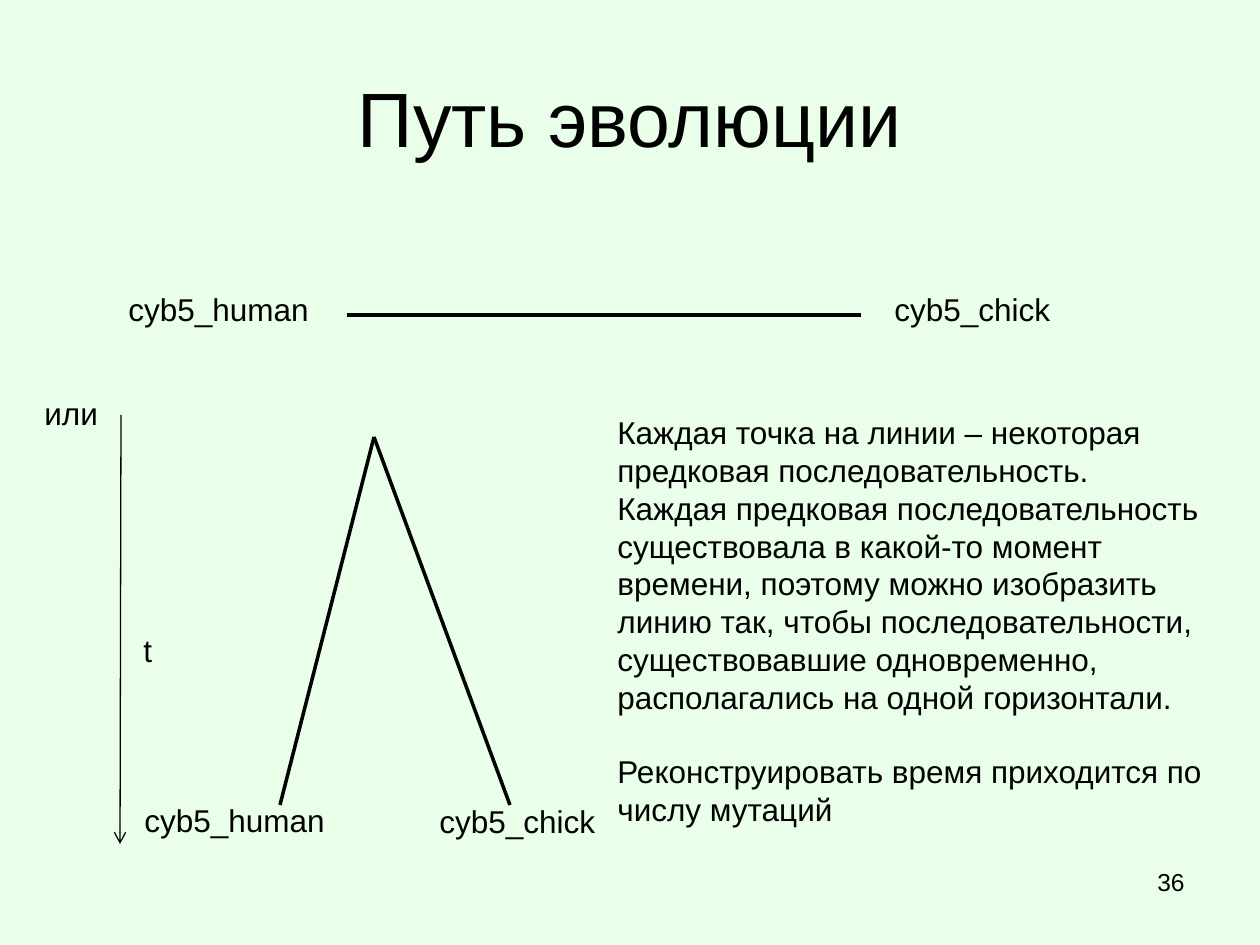
from lxml.etree import SubElement
from pptx import Presentation
from pptx.dml.color import RGBColor
from pptx.enum.shapes import MSO_CONNECTOR
from pptx.enum.text import MSO_ANCHOR, PP_ALIGN
from pptx.oxml.ns import qn
from pptx.util import Emu, Pt

BLACK = RGBColor(0x00, 0x00, 0x00)
MINT = RGBColor(0xE9, 0xFF, 0xE9)
FONT = "Arial"
LABEL_WIDTH, LABEL_HEIGHT = 210, 50
HUMAN, CHICK = "cyb5_human", "cyb5_chick"
EXPLANATION = [
    "Каждая точка на линии – некоторая предковая последовательность.",
    "Каждая предковая последовательность существовала в какой-то момент "
    "времени, поэтому можно изобразить линию так, чтобы последовательности, "
    "существовавшие одновременно, располагались на одной горизонтали.",
    "Реконструировать время приходится по числу мутаций",
]


def px(length):
    """Convert slide pixels to EMU."""
    return Emu(round(length * 914400 / 126))


def add_text(page, left, top, width, height, lines, size=18,
             align=PP_ALIGN.LEFT, anchor=MSO_ANCHOR.TOP):
    """Add a wrapped text box with one paragraph per line and return its frame."""
    box = page.shapes.add_textbox(px(left), px(top), px(width), px(height))
    text_frame = box.text_frame
    text_frame.word_wrap = True
    text_frame.vertical_anchor = anchor
    text_frame.text = "\n".join(lines)
    for para in text_frame.paragraphs:
        para.alignment = align
        for span in para.runs:
            span.font.name = FONT
            span.font.size = Pt(size)
            span.font.color.rgb = BLACK
    return text_frame


def add_label(page, left, top, text, width=LABEL_WIDTH):
    """Add a one-line label."""
    add_text(page, left, top, width, LABEL_HEIGHT, [text])


def add_line(page, start, end, weight=2, arrow=False):
    """Add a straight black line, with an arrowhead at its end if wanted."""
    line = page.shapes.add_connector(
        MSO_CONNECTOR.STRAIGHT, *map(px, (*start, *end)))
    line.line.color.rgb = BLACK
    line.line.width = Pt(weight)
    if arrow:
        SubElement(line.line._get_or_add_ln(), qn("a:tailEnd"), type="arrow")
    SubElement(line._element.spPr, qn("a:effectLst"))


def add_title(page, left, top, width, height):
    """Add the centred slide title."""
    add_text(page, left, top, width, height, ["Путь эволюции"], 44,
             PP_ALIGN.CENTER, MSO_ANCHOR.MIDDLE)


def add_direct_path(page, left, top):
    """Add the two sequences joined by a horizontal line."""
    add_label(page, left, top, HUMAN)
    add_line(page, (left + 231, top + 31), (left + 745, top + 31))
    add_label(page, left + 766, top, CHICK)


def add_time_axis(page, left, top, height):
    """Add the downward time arrow and its label."""
    add_line(page, (left + 1, top), (left, top + height), 0.75, True)
    add_label(page, left + 11, top + 210, "t", 53)


def add_tree(page, left, top, height):
    """Add two branches from a common ancestor down to the labelled leaves."""
    ancestor = (left + 242, top)
    for leaf_left in (148, 378):
        add_line(page, ancestor, (left + leaf_left, top + height))
    add_label(page, left, top + height - 10, HUMAN)
    add_label(page, left + 295, top + height - 9, CHICK)


def add_explanation(page, left, top, width, height):
    """Add the explanatory text, its last paragraph set apart."""
    text_frame = add_text(page, left, top, width, height, EXPLANATION)
    text_frame.paragraphs[-1].space_before = Pt(21)


def add_page_number(page, left, top, width, height):
    """Add the right-aligned page number."""
    add_text(page, left, top, width, height, ["36"], 14, PP_ALIGN.RIGHT)


def main():
    """Build the slide and save the deck."""
    deck = Presentation()
    deck.slide_width, deck.slide_height = px(1260), px(945)
    page = deck.slides.add_slide(deck.slide_layouts[6])
    page.background.fill.solid()
    page.background.fill.fore_color.rgb = MINT
    add_title(page, 63, 38, 1134, 158)
    add_direct_path(page, 116, 284)
    add_label(page, 32, 388, "или", 158)
    add_time_axis(page, 120, 415, 429)
    add_tree(page, 132, 437, 368)
    add_page_number(page, 903, 861, 294, 66)
    add_explanation(page, 605, 407, 624, 432)
    deck.save("out.pptx")


if __name__ == "__main__":
    main()
